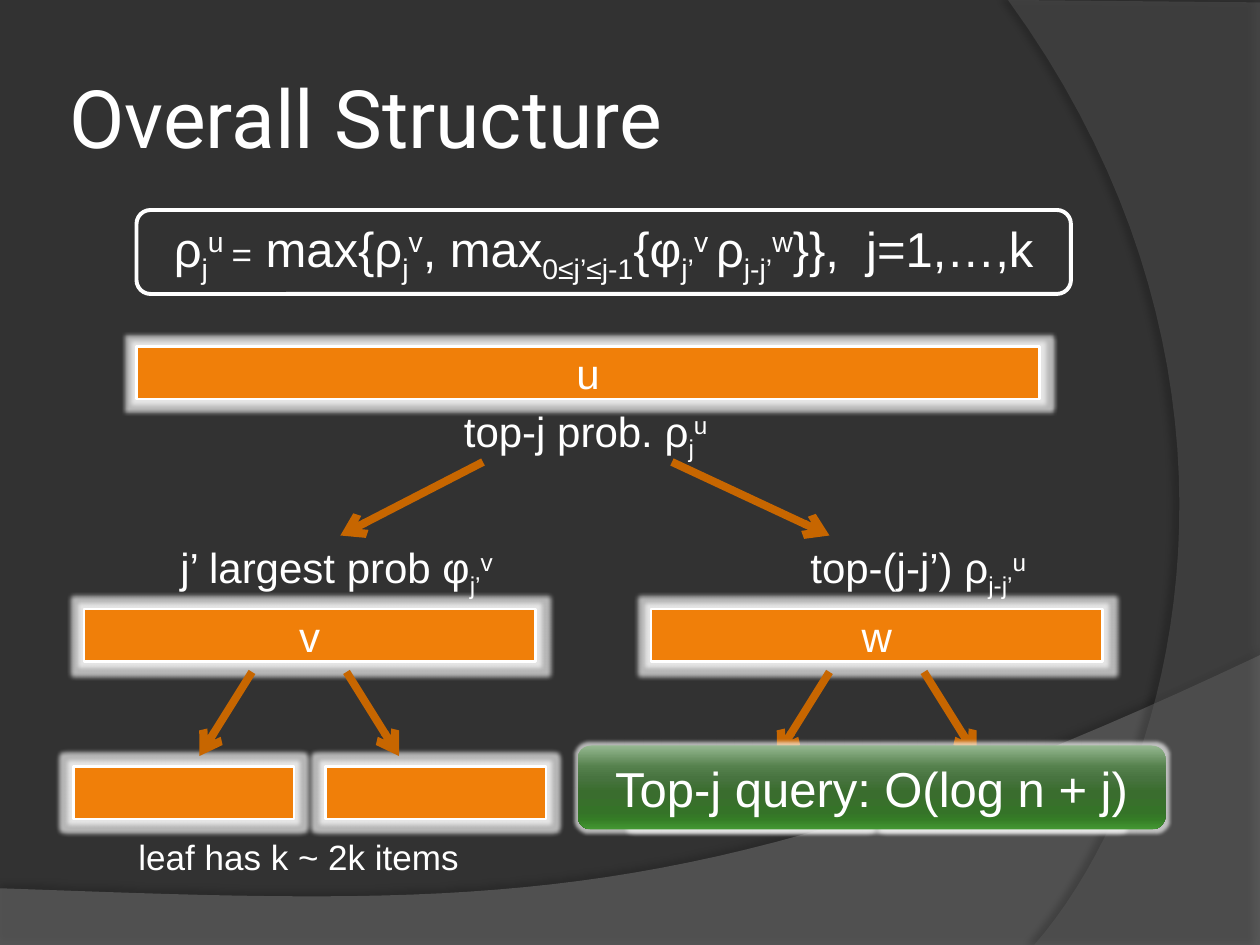
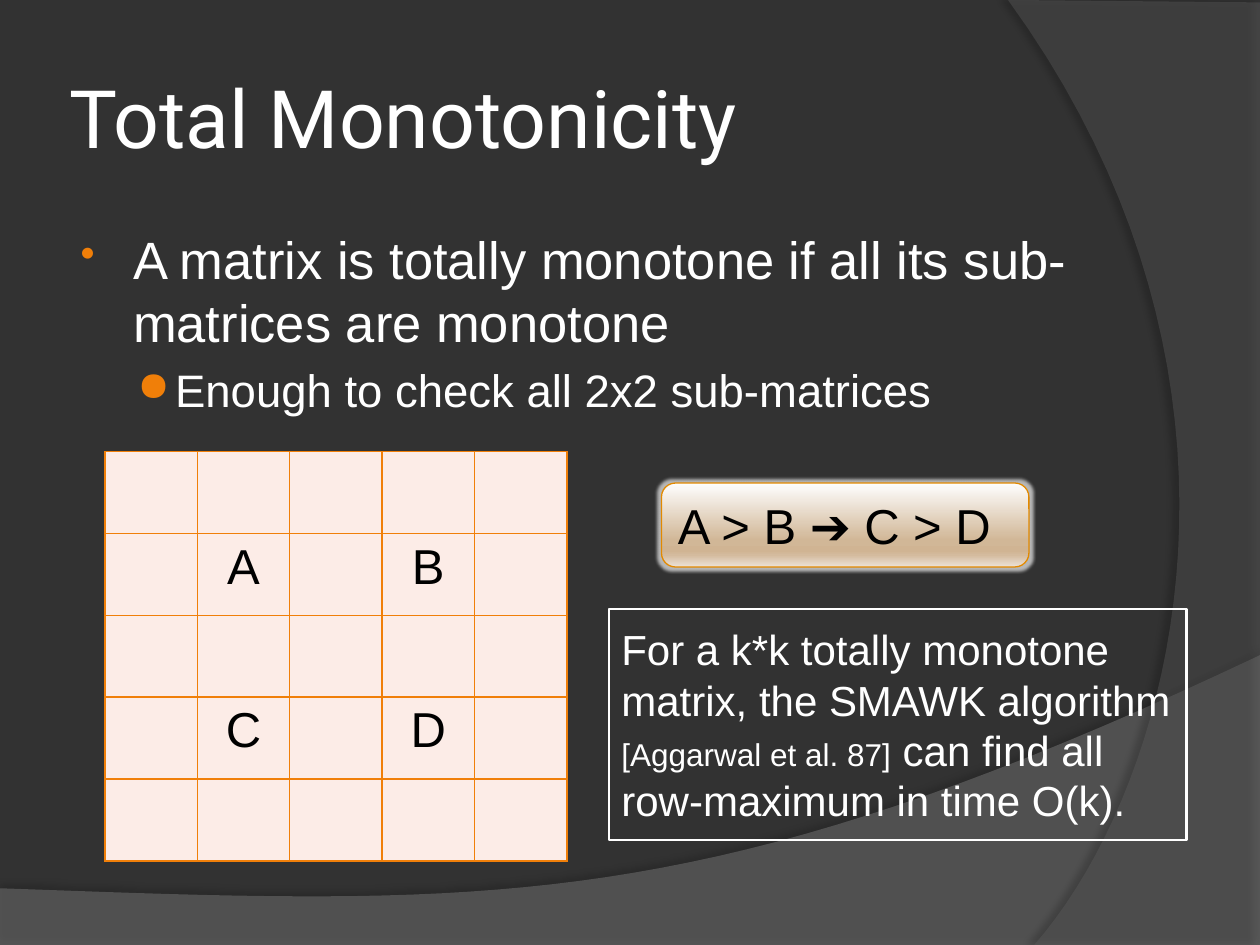
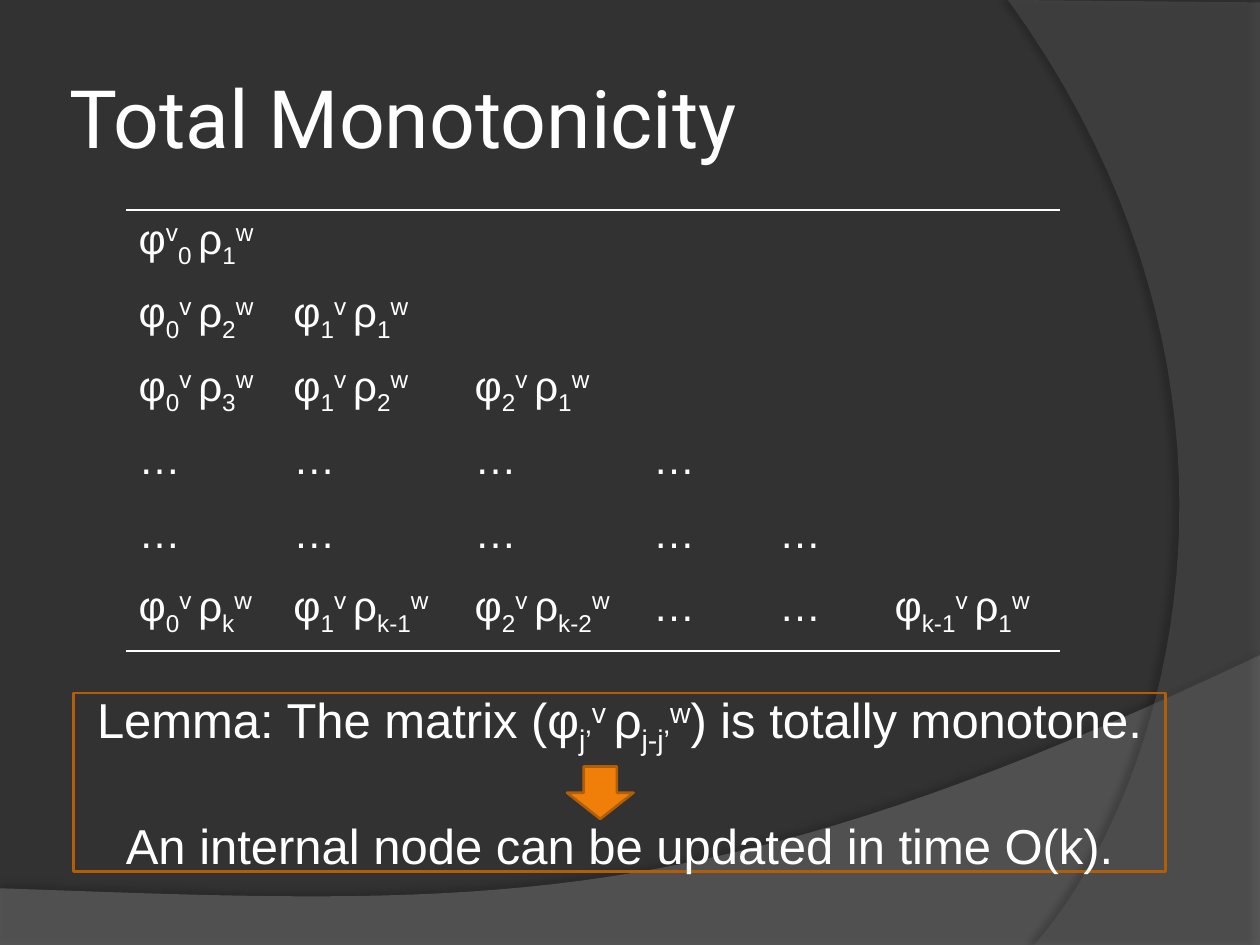
"""Build three slides on top-j queries and totally monotone matrices."""
from dataclasses import dataclass

import pptx
import pptx.dml.color
import pptx.enum.shapes
import pptx.enum.text
import pptx.oxml
import pptx.oxml.ns
import pptx.util

Pt = pptx.util.Pt
SHAPE = pptx.enum.shapes.MSO_SHAPE
ANCHOR = pptx.enum.text.MSO_ANCHOR
LEFT = pptx.enum.text.PP_ALIGN.LEFT
CENTER = pptx.enum.text.PP_ALIGN.CENTER
qn = pptx.oxml.ns.qn
NS = pptx.oxml.ns.nsdecls("a")

BACKGROUND = "323232"
WHITE = "FFFFFF"
BLACK = "000000"
ORANGE = "F07F09"
DARK_ORANGE = "B25E07"
ARROW = "C76600"
PINK = "FCECE7"
GREEN_STOPS = ((0, "96B891"), (25, "55814D"), (38, "487440"), (55, "3A6D2E"),
               (80, "357328"), (88, "357D26"), (100, "449833"))
TAN_STOPS = ((0, "FEFEFE"), (68, "D1B797"), (81, "D0B493"), (86, "D4BB9E"), (100, "ECE2D8"))
NO_GRID_STYLE = "{2D5ABB26-0587-4C30-8999-92F81FD0307C}"
BASELINES = {"_": "-25000", "^": "30000"}


@dataclass
class Style:
    """Look of a run of text; small is the size of runs marked with %."""
    size: float
    color: str = WHITE
    font: str = "Arial"
    align: int = LEFT
    small: float = 20


@dataclass
class Box:
    """A preset shape with optional fill, line, glow and text."""
    x: float
    y: float
    w: float
    h: float
    lines: tuple = ()
    style: Style = None
    kind: int = SHAPE.RECTANGLE
    fill: str = None
    stops: tuple = ()
    line: str = None
    weight: float = 1.5
    glow: float = 0
    gap: float = 0


@dataclass
class Label:
    """Free text at a place."""
    x: float
    y: float
    w: float
    h: float
    text: str
    size: float


@dataclass
class Arrow:
    """A straight arrow between two points."""
    x1: float
    y1: float
    x2: float
    y2: float


@dataclass
class Band:
    """A translucent band with one curved edge and a shadow."""
    before: tuple
    curve: tuple
    color: str
    alpha: int
    shadow_alpha: int
    distance: float
    direction: int


BANDS = (
    Band(((0, 507.6), (0, 540), (720, 540)),
         ((720, 374.4), (402.5, 524.9), (281.5, 517.7), (0, 507.6)), "7F7F7F", 45, 35, 3.5, 270),
    Band(((720, 1.4), (720, 540)),
         ((591, 540), (673.2, 445.7), (733, 216), (576, 0)), "5E5E5E", 40, 45, 4, 180),
)


def rgb(color: str):
    """Return a colour from its hex string."""
    return pptx.dml.color.RGBColor.from_string(color)


def xml(text: str):
    """Return a DrawingML element from markup without a namespace."""
    tag, rest = text.split(" ", 1)
    return pptx.oxml.parse_xml(f"{tag} {NS} {rest}")


def add_effect(sp, effect) -> None:
    """Put one effect on a shape."""
    sp._element.spPr.find(qn("a:effectLst")).append(effect)


def write(p, text: str, style: Style) -> None:
    """Write runs split by |, where _ lowers, ^ raises and % shrinks a run."""
    p.alignment = style.align
    for part in text.split("|"):
        mark = part[0] if part[0] in "_^%" else ""
        r = p.add_run()
        r.text = part[len(mark):]
        r.font.size = Pt(style.small if mark == "%" else style.size)
        r.font.name = style.font
        r.font.color.rgb = rgb(style.color)
        if mark in BASELINES:
            r._r.get_or_add_rPr().set("baseline", BASELINES[mark])


def bezier(a: tuple, b: tuple, c: tuple, d: tuple, steps: int = 40) -> list:
    """Return points along a cubic curve."""
    ts = [i / steps for i in range(steps + 1)]
    return [tuple((1 - t) ** 3 * a[k] + 3 * t * (1 - t) ** 2 * b[k]
                  + 3 * t * t * (1 - t) * c[k] + t ** 3 * d[k] for k in (0, 1)) for t in ts]


def add_band(s, band: Band) -> None:
    """Draw a background band."""
    points = [(Pt(x), Pt(y)) for x, y in (*band.before, *bezier(*band.curve))]
    builder = s.shapes.build_freeform(*points[0])
    builder.add_line_segments(points[1:], close=True)
    sp = builder.convert_to_shape()
    sp.shadow.inherit = False
    sp.line.fill.background()
    sp.fill.solid()
    sp.fill.fore_color.rgb = rgb(band.color)
    sp._element.spPr.find(".//" + qn("a:srgbClr")).append(
        xml(f'<a:alpha val="{band.alpha * 1000}"/>'))
    add_effect(sp, xml(
        f'<a:outerShdw blurRad="{Pt(4)}" dist="{Pt(band.distance)}" dir="{band.direction * 60000}" '
        f'algn="ctr" rotWithShape="0"><a:srgbClr val="{BLACK}">'
        f'<a:alpha val="{band.shadow_alpha * 1000}"/></a:srgbClr></a:outerShdw>'))


def add_textbox(s, x: float, y: float, w: float, h: float, wrap: bool):
    """Add an empty text box and return its text frame."""
    tf = s.shapes.add_textbox(Pt(x), Pt(y), Pt(w), Pt(h)).text_frame
    tf.word_wrap = wrap
    return tf


def add_slide(prs, title: str):
    """Add a slide with the shared bands and title."""
    s = prs.slides.add_slide(prs.slide_layouts[6])
    for band in BANDS:
        add_band(s, band)
    tf = add_textbox(s, 36, 21.6, 588, 90, True)
    tf.vertical_anchor = ANCHOR.MIDDLE
    tf.margin_left = tf.margin_right = Pt(3.6)
    write(tf.paragraphs[0], title, Style(46, font="Roboto"))
    return s


def add_box(s, box: Box) -> None:
    """Draw a box and its text."""
    sp = s.shapes.add_shape(box.kind, Pt(box.x), Pt(box.y), Pt(box.w), Pt(box.h))
    sp.shadow.inherit = False
    sp.fill.background()
    if box.fill:
        sp.fill.solid()
        sp.fill.fore_color.rgb = rgb(box.fill)
    if box.stops:
        stops = "".join(f'<a:gs pos="{pos * 1000}"><a:srgbClr val="{color}"/></a:gs>'
                        for pos, color in box.stops)
        spPr = sp._element.spPr
        spPr.replace(spPr.find(qn("a:noFill")), xml(
            f'<a:gradFill rotWithShape="1"><a:gsLst>{stops}</a:gsLst>'
            '<a:lin ang="5400000" scaled="0"/></a:gradFill>'))
    if box.line:
        sp.line.color.rgb = rgb(box.line)
        sp.line.width = Pt(box.weight)
    else:
        sp.line.fill.background()
    if box.glow:
        add_effect(sp, xml(f'<a:glow rad="{Pt(box.glow)}"><a:srgbClr val="{WHITE}">'
                           '<a:alpha val="65000"/></a:srgbClr></a:glow>'))
    tf = sp.text_frame
    tf.word_wrap = True
    tf.vertical_anchor = ANCHOR.MIDDLE
    for i, line in enumerate(box.lines):
        p = tf.add_paragraph() if i else tf.paragraphs[0]
        p.space_before = Pt(box.gap if i else 0)
        write(p, line, box.style)


def add_label(s, label: Label) -> None:
    """Draw a label."""
    tf = add_textbox(s, label.x, label.y, label.w, label.h, False)
    write(tf.paragraphs[0], label.text, Style(label.size))


def add_arrow(s, arrow: Arrow) -> None:
    """Draw an arrow."""
    cx = s.shapes.add_connector(pptx.enum.shapes.MSO_CONNECTOR.STRAIGHT, Pt(arrow.x1),
                                Pt(arrow.y1), Pt(arrow.x2), Pt(arrow.y2))
    cx.line.color.rgb = rgb(ARROW)
    cx.line.width = Pt(4.5)
    cx.line._get_or_add_ln().append(xml('<a:tailEnd type="arrow"/>'))
    cx._element.spPr.append(xml("<a:effectLst />"))


def add_bullet(p, text: str, size: float, level: int, left: float, hang: float,
               char: str, percent: int) -> None:
    """Write a bulleted paragraph."""
    write(p, text, Style(size))
    p.level = level
    p.space_before = Pt(size * 0.2)
    pPr = p._p.get_or_add_pPr()
    pPr.set("marL", str(Pt(left)))
    pPr.set("indent", str(-Pt(hang)))
    pPr.append(xml(f'<a:buClr ><a:srgbClr val="{ORANGE}"/></a:buClr>'))
    pPr.append(xml(f'<a:buSzPct val="{percent * 1000}"/>'))
    pPr.append(xml(f'<a:buChar char="{char}"/>'))


def add_grid(s, x: float, y: float, widths: list, heights: list):
    """Add a table without style and return it."""
    frame = s.shapes.add_table(len(heights), len(widths), Pt(x), Pt(y),
                               Pt(sum(widths)), Pt(sum(heights)))
    table = frame.table
    table.first_row = table.horz_banding = False
    next(frame._element.iter(qn("a:tableStyleId"))).text = NO_GRID_STYLE
    for column, width in zip(table.columns, widths):
        column.width = Pt(width)
    for row, height in zip(table.rows, heights):
        row.height = Pt(height)
    return table


def format_cell(cell, text: str, style: Style, sides: str, line: str, fill: str = None) -> None:
    """Write a cell, draw the borders named by sides and fill it."""
    if text:
        write(cell.text_frame.paragraphs[0], text, style)
    tcPr = cell._tc.get_or_add_tcPr()
    for side in sides:
        tcPr.append(xml(f'<a:ln{side} w="{Pt(1)}"><a:solidFill><a:srgbClr val="{line}"/>'
                        f'</a:solidFill></a:ln{side}>'))
    if fill:
        cell.fill.solid()
        cell.fill.fore_color.rgb = rgb(fill)
    else:
        cell.fill.background()


def node(x: float, y: float, w: float, text: str = "") -> Box:
    """Return a glowing tree node."""
    return Box(x, y, w, 30, (text,) if text else (), Style(24, align=CENTER),
               fill=ORANGE, line=WHITE, glow=5)


def term(i: str, j: str) -> str:
    """Return one entry of the product matrix."""
    return f"φ|_{i}|^v |ρ|_{j}|^w"


def structure_slide(prs) -> None:
    """Show the tree and its recurrence."""
    s = add_slide(prs, "Overall Structure")
    for box in (node(78, 198, 516, "u"), node(48, 348, 258, "v"), node(372, 348, 258, "w")):
        add_box(s, box)
    for label in (Label(258, 228, 157, 36, "top-j prob. ρ|_j|^u", 24),
                  Label(96, 306, 196.5, 36, "j’ largest prob φ|_j’|^v", 24),
                  Label(456, 306, 142, 36, "top-(j-j’) ρ|_j-j’|^u", 24),
                  Label(72, 474, 198.5, 32, "leaf has k ~ 2k items", 20)):
        add_label(s, label)
    formula = ("ρ|_j|^u |%=| max{ρ|_j|^v|, max|_0≤j’≤j-1|{φ|_j’|^v |ρ|_j-j’|^w"
               "|}},  j=1,…,k")
    add_box(s, Box(78, 120, 534, 48, (formula,), Style(28, align=CENTER),
                   SHAPE.ROUNDED_RECTANGLE, line=WHITE, weight=2.25))
    add_arrow(s, Arrow(276, 264, 194.5, 306))
    add_arrow(s, Arrow(384, 264, 474, 306))
    for left in (42, 366):
        for x in (left, left + 144):
            add_box(s, node(x, 438, 126))
    for left in (144, 474):
        add_arrow(s, Arrow(left, 384, left - 30, 432))
        add_arrow(s, Arrow(left + 54, 384, left + 84, 432))
    add_box(s, Box(330, 426, 336, 48, ("Top-j query: O(log n + j)",), Style(28, align=CENTER),
                   SHAPE.ROUNDED_RECTANGLE, stops=GREEN_STOPS, glow=4))


def definition_slide(prs) -> None:
    """Define total monotonicity with a sample matrix."""
    s = add_slide(prs, "Total Monotonicity")
    tf = add_textbox(s, 36, 126, 588, 356, True)
    add_bullet(tf.paragraphs[0], "A matrix is totally monotone if all its sub-matrices are monotone",
               30, 0, 33, 30, "•", 80)
    add_bullet(tf.add_paragraph(), "Enough to check all 2x2 sub-matrices",
               26, 1, 57, 21.6, "●", 90)
    corners = {(1, 1): "A", (1, 3): "B", (3, 1): "C", (3, 3): "D"}
    table = add_grid(s, 60, 258, [52.8] * 5, [46.8] * 5)
    for i in range(5):
        for j in range(5):
            format_cell(table.cell(i, j), corners.get((i, j), ""),
                        Style(28, BLACK, align=CENTER), "LRTB", ORANGE, PINK)
    add_box(s, Box(378, 276, 210, 48, ("A > B ➔ C > D",), Style(28, BLACK),
                   SHAPE.ROUNDED_RECTANGLE, stops=TAN_STOPS, line="E28900", weight=0.75, glow=4))
    smawk = ("For a k*k totally monotone matrix, the SMAWK algorithm |%[Aggarwal et al. 87]"
             "| can find all row-maximum in time O(k).")
    add_box(s, Box(348, 348, 330, 132, (smawk,), Style(24, small=18), line=WHITE))


def lemma_slide(prs) -> None:
    """Show the product matrix and the lemma."""
    s = add_slide(prs, "Total Monotonicity")
    rows = (["φ|^v|_0 |ρ|_1|^w"],
            [term("0", "2"), term("1", "1")],
            [term("0", "3"), term("1", "2"), term("2", "1")],
            ["…"] * 4,
            ["…"] * 5,
            [term("0", "k"), term("1", "k-1"), term("2", "k-2"), "…", "…", term("k-1", "1")])
    table = add_grid(s, 72, 120, [88.5, 103.5, 102, 72, 66, 102], [42] * 6)
    sides = {0: "T", 5: "B"}
    for i, row in enumerate(rows):
        for j in range(6):
            format_cell(table.cell(i, j), row[j] if j < len(row) else "",
                        Style(24), sides.get(i, ""), WHITE)
    lemma = ("Lemma: The matrix (φ|_j’|^v |ρ|_j-j’|^w|) is totally monotone.",
             "An internal node can be updated in time O(k).")
    add_box(s, Box(42, 396, 624, 102, lemma, Style(28, align=CENTER), line=DARK_ORANGE, gap=34))
    add_box(s, Box(324, 438, 38, 30, kind=SHAPE.DOWN_ARROW, fill=ORANGE, line=DARK_ORANGE))


def main() -> None:
    """Build and save the slides."""
    prs = pptx.Presentation()
    prs.slide_width, prs.slide_height = Pt(720), Pt(540)
    fill = prs.slide_master.background.fill
    fill.solid()
    fill.fore_color.rgb = rgb(BACKGROUND)
    structure_slide(prs)
    definition_slide(prs)
    lemma_slide(prs)
    prs.save("out.pptx")


if __name__ == "__main__":
    main()
